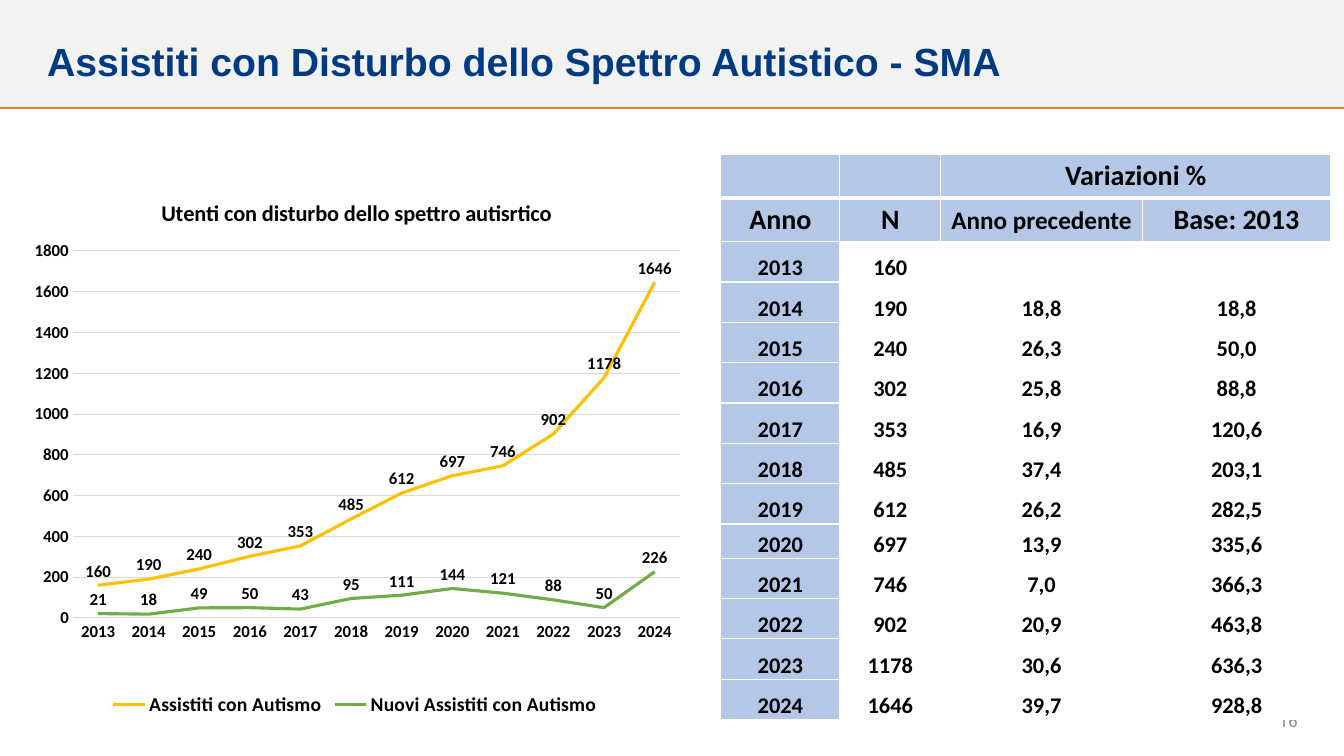
import math

from pptx import Presentation
from pptx import util as u
from pptx.chart import data as chart_data
from pptx.dml.color import RGBColor
from pptx.enum import chart as chart_enum
from pptx.enum import shapes, text
from pptx.oxml import parse_xml
from pptx.oxml.ns import nsdecls, qn

WIDTH, HEIGHT = 13.33, 7.5
COLORS = {
    "band": "F2F2F2", "orange": "F47B20", "navy": "003A80", "gray": "8C8C8C",
    "black": "000000", "white": "FFFFFF", "blue": "B4C7E7", "grid": "D9D9D9",
    "yellow": "FFC000", "green": "70AD47",
}
YEARS = [str(year) for year in range(2013, 2025)]
ASSISTED = [160, 190, 240, 302, 353, 485, 612, 697, 746, 902, 1178, 1646]
NEW_ASSISTED = [21, 18, 49, 50, 43, 95, 111, 144, 121, 88, 50, 226]
COLUMN_WIDTHS = [1.18, 1, 2, 1.87]
HEADER_HEIGHT, ROW_HEIGHT, SHORT_ROW_HEIGHT = 0.43, 0.4, 0.34


def color(name):
    return RGBColor.from_string(COLORS[name])


def inches(*lengths):
    return [u.Inches(length) for length in lengths]


def style_font(font, size, name="Calibri", tint="black", bold=True):
    font.size = u.Pt(size)
    font.name = name
    font.bold = bold
    font.color.rgb = color(tint)


def write(frame, words, size, align, **style):
    paragraph = frame.paragraphs[0]
    paragraph.alignment = align
    run = paragraph.add_run()
    run.text = words
    style_font(run.font, size, **style)
    return paragraph


def add_text(slide, box, words, size, align, **style):
    frame = slide.shapes.add_textbox(*inches(*box)).text_frame
    frame.word_wrap = True
    frame.vertical_anchor = text.MSO_ANCHOR.MIDDLE
    return write(frame, words, size, align, **style)


def add_header(slide, box):
    left, top, width, height = box
    band = slide.shapes.add_shape(shapes.MSO_SHAPE.RECTANGLE, *inches(*box))
    band.shadow.inherit = False
    band.fill.solid()
    band.fill.fore_color.rgb = color("band")
    band.line.fill.background()
    bottom = top + height
    rule = slide.shapes.add_connector(
        shapes.MSO_CONNECTOR.STRAIGHT, *inches(left, bottom, left + width, bottom))
    rule.line.color.rgb = color("orange")
    rule.line.width = u.Pt(1)
    rule.element.spPr.append(parse_xml(f"<a:effectLst {nsdecls('a')}/>"))
    title = add_text(
        slide, (left + 0.37, top + 0.22, width - 0.73, height - 0.21),
        "Assistiti con Disturbo dello Spettro Autistico - SMA", 28,
        text.PP_ALIGN.LEFT, name="Arial", tint="navy")
    title.line_spacing = 0.9


def add_page_number(slide, box):
    add_text(slide, box, "16", 12, text.PP_ALIGN.RIGHT,
             name="Roboto", tint="gray", bold=False)


def place(element, index, target=None, **shares):
    for layout in element.findall(qn("c:layout")):
        element.remove(layout)
    inner = f'<c:layoutTarget val="{target}"/>' if target else ""
    modes = "".join(f'<c:{key}Mode val="edge"/>' for key in "xy")
    values = "".join(f'<c:{key} val="{share}"/>' for key, share in shares.items())
    element.insert(index, parse_xml(
        f"<c:layout {nsdecls('c')}><c:manualLayout>{inner}{modes}{values}"
        "</c:manualLayout></c:layout>"))


def style_axis(axis):
    axis.major_tick_mark = axis.minor_tick_mark = chart_enum.XL_TICK_MARK.NONE
    style_font(axis.tick_labels.font, 12)


def style_line(line, tint, width):
    line.color.rgb = color(tint)
    line.width = u.Pt(width)


def add_line_chart(slide, box):
    values = chart_data.CategoryChartData(number_format="General")
    values.categories = YEARS
    values.add_series("Assistiti con Autismo", ASSISTED)
    values.add_series("Nuovi Assistiti con Autismo", NEW_ASSISTED)
    chart = slide.shapes.add_chart(
        chart_enum.XL_CHART_TYPE.LINE, *inches(*box), values).chart
    style_font(chart.font, 12)

    chart.has_title = True
    write(chart.chart_title.text_frame, "Utenti con disturbo dello spettro autisrtico",
          16, text.PP_ALIGN.CENTER)
    chart.chart_title.include_in_layout = False
    place(chart.chart_title.element, 1, x=0.21, y=0.04)
    place(chart.element.find(".//" + qn("c:plotArea")), 0, "inner",
          x=0.086, y=0.145, w=0.891, h=0.668)

    chart.has_legend = True
    chart.legend.position = chart_enum.XL_LEGEND_POSITION.BOTTOM
    chart.legend.include_in_layout = False
    style_font(chart.legend.font, 14)

    style_axis(chart.category_axis)
    style_line(chart.category_axis.format.line, "grid", 0.75)
    value_axis = chart.value_axis
    style_axis(value_axis)
    value_axis.minimum_scale, value_axis.maximum_scale = 0, 1800
    value_axis.major_unit = 200
    value_axis.format.line.fill.background()
    style_line(value_axis.major_gridlines.format.line, "grid", 0.75)

    plot = chart.plots[0]
    plot.vary_by_categories = False
    for series, tint in zip(plot.series, ("yellow", "green")):
        series.smooth = False
        series.marker.style = chart_enum.XL_MARKER_STYLE.NONE
        style_line(series.format.line, tint, 2.25)
        labels = series.data_labels
        labels.show_value = True
        labels.position = chart_enum.XL_LABEL_POSITION.ABOVE
        style_font(labels.font, 12)


def variation(count, base):
    rounded = math.floor(1000 * (count - base) / base + 0.5) / 10
    return f"{rounded:.1f}".replace(".", ",")


def table_rows():
    rows = [["", "", "Variazioni %", ""],
            ["Anno", "N", "Anno precedente", "Base: 2013"],
            [YEARS[0], str(ASSISTED[0]), "", ""]]
    for year, previous, count in zip(YEARS[1:], ASSISTED, ASSISTED[1:]):
        rows.append([year, str(count), variation(count, previous),
                     variation(count, ASSISTED[0])])
    return rows


def add_borders(cell, row):
    properties = cell._tc.get_or_add_tcPr()
    thick_side = {0: "B", 1: "T"}.get(row)
    for index, side in enumerate("LRTB"):
        width = u.Pt(3 if side == thick_side else 1)
        properties.insert(index, parse_xml(
            f'<a:ln{side} {nsdecls("a")} w="{width}"><a:solidFill>'
            f'<a:srgbClr val="{COLORS["white"]}"/></a:solidFill></a:ln{side}>'))


def fill_cell(cell, words, row, column):
    header = row < 2
    cell.fill.solid()
    cell.fill.fore_color.rgb = color("blue" if header or column == 0 else "white")
    add_borders(cell, row)
    centered = row == 1 and column < 2
    cell.vertical_anchor = text.MSO_ANCHOR.MIDDLE if centered else text.MSO_ANCHOR.BOTTOM
    if not header:
        cell.margin_left = cell.margin_right = cell.margin_top = u.Inches(0.01)
        cell.margin_bottom = 0
    if words:
        size = 18 if (row, column) == (1, 2) else 20 if header else 16
        write(cell.text_frame, words, size, text.PP_ALIGN.CENTER)


def add_variation_table(slide, box):
    rows = table_rows()
    table = slide.shapes.add_table(
        len(rows), len(COLUMN_WIDTHS), *inches(*box)).table
    table.first_row = table.horz_banding = False
    for column, width in zip(table.columns, COLUMN_WIDTHS):
        column.width = u.Inches(width)
    for row, words in enumerate(rows):
        height = SHORT_ROW_HEIGHT if words[0] == "2020" else ROW_HEIGHT
        table.rows[row].height = u.Inches(HEADER_HEIGHT if row < 2 else height)
        for column, word in enumerate(words):
            fill_cell(table.cell(row, column), word, row, column)
    table.cell(0, 2).merge(table.cell(0, 3))


def main():
    presentation = Presentation()
    presentation.slide_width, presentation.slide_height = inches(WIDTH, HEIGHT)
    slide = presentation.slides.add_slide(presentation.slide_layouts[6])
    add_header(slide, (0, -0.03, WIDTH, 1.1))
    add_page_number(slide, (12.32, 6.95, 0.65, 0.4))
    add_variation_table(slide, (7.15, 1.53, 6.05, 5.57))
    add_line_chart(slide, (0.14, 1.7, 6.76, 5.45))
    presentation.save("out.pptx")


if __name__ == "__main__":
    main()
